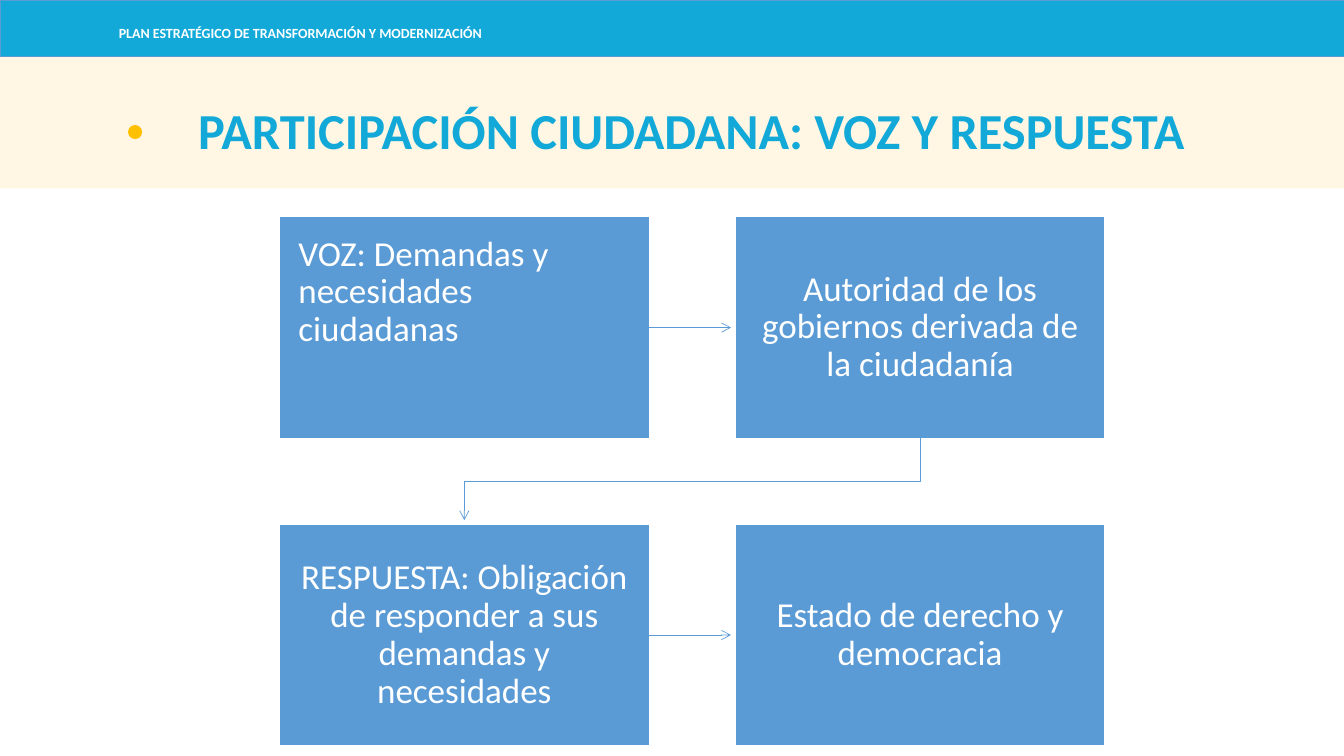
from dataclasses import dataclass

from lxml import etree
from pptx import Presentation
from pptx.dml.color import RGBColor
from pptx.enum.shapes import MSO_CONNECTOR, MSO_SHAPE
from pptx.enum.text import MSO_ANCHOR, PP_ALIGN
from pptx.oxml.ns import qn
from pptx.shapes.autoshape import Shape
from pptx.shapes.connector import Connector
from pptx.slide import Slide
from pptx.util import Inches, Pt

RECTANGLE = MSO_SHAPE.RECTANGLE
OVAL = MSO_SHAPE.OVAL
STRAIGHT = MSO_CONNECTOR.STRAIGHT
LEFT, CENTER = PP_ALIGN.LEFT, PP_ALIGN.CENTER
TOP, MIDDLE, BOTTOM = MSO_ANCHOR.TOP, MSO_ANCHOR.MIDDLE, MSO_ANCHOR.BOTTOM
RIGHT_SIDE = 3

COLORS = {
    "cyan": "12A9D9",
    "blue": "5B9BD5",
    "cream": "FFF2CC",
    "gold": "FFC000",
    "white": "FFFFFF",
}
FONT = "Calibri"

SLIDE_W, SLIDE_H = 13.33, 7.5
HEADER_H, TITLE_BAND_H = 0.56, 1.31
STEP_W, STEP_H = 3.67, 2.2
GRID_LEFT, GRID_TOP = 2.77, 2.15
COLUMN_PITCH, ROW_PITCH = 4.52, 3.05
STEP_INSET = 0.19
ARROW_GAP = 0.04


@dataclass(frozen=True)
class Box:
    left: float
    top: float
    width: float
    height: float


@dataclass(frozen=True)
class TextStyle:
    size: float
    color: str
    bold: bool = False
    align: PP_ALIGN = CENTER
    anchor: MSO_ANCHOR = MIDDLE
    spacing: float = 0.9


@dataclass(frozen=True)
class Step:
    column: int
    row: int
    text: str
    align: PP_ALIGN = CENTER
    anchor: MSO_ANCHOR = MIDDLE

    @property
    def box(self) -> Box:
        return Box(GRID_LEFT + self.column * COLUMN_PITCH,
                   GRID_TOP + self.row * ROW_PITCH, STEP_W, STEP_H)


STEPS = [
    Step(0, 0, "VOZ: Demandas y necesidades ciudadanas", LEFT, TOP),
    Step(1, 0, "Autoridad de los gobiernos derivada de la ciudadanía"),
    Step(0, 1, "RESPUESTA: Obligación de responder a sus demandas y necesidades"),
    Step(1, 1, "Estado de derecho y democracia"),
]


def rgb(name: str) -> RGBColor:
    return RGBColor.from_string(COLORS[name])


def inches(box: Box) -> list[int]:
    return [Inches(v) for v in (box.left, box.top, box.width, box.height)]


def add_filled(slide: Slide, kind: MSO_SHAPE, box: Box, fill: str,
               line: str = "", line_width: float = 0) -> Shape:
    shape = slide.shapes.add_shape(kind, *inches(box))
    shape.shadow.inherit = False
    shape.fill.solid()
    shape.fill.fore_color.rgb = rgb(fill)
    if line:
        shape.line.color.rgb = rgb(line)
        shape.line.width = Pt(line_width)
    else:
        shape.line.fill.background()
    return shape


def write_text(shape: Shape, text: str, style: TextStyle) -> None:
    frame = shape.text_frame
    frame.text = text
    frame.word_wrap = True
    frame.vertical_anchor = style.anchor
    paragraph = frame.paragraphs[0]
    paragraph.alignment = style.align
    paragraph.line_spacing = style.spacing
    font = paragraph.runs[0].font
    font.name = FONT
    font.size = Pt(style.size)
    font.bold = style.bold
    font.color.rgb = rgb(style.color)


def add_label(slide: Slide, box: Box, text: str, style: TextStyle) -> None:
    write_text(slide.shapes.add_textbox(*inches(box)), text, style)


def set_opacity(shape: Shape, percent: int) -> None:
    color = shape.fill._xPr.find(qn("a:solidFill"))[0]
    etree.SubElement(color, qn("a:alpha"), val=str(percent * 1000))


def style_arrow(arrow: Shape | Connector) -> None:
    arrow.line.color.rgb = rgb("blue")
    arrow.line.width = Pt(0.5)
    etree.SubElement(arrow.line._get_or_add_ln(), qn("a:tailEnd"), type="arrow")


def add_step(slide: Slide, step: Step) -> Shape:
    shape = add_filled(slide, RECTANGLE, step.box, "blue", "white", 1)
    write_text(shape, step.text,
               TextStyle(25, "white", align=step.align, anchor=step.anchor))
    frame = shape.text_frame
    frame.margin_left = frame.margin_right = Inches(STEP_INSET)
    frame.margin_top = frame.margin_bottom = Inches(STEP_INSET)
    return shape


def add_row_arrow(slide: Slide, source: Shape, start: Box, target: Box) -> None:
    y = Inches(start.top + STEP_H / 2)
    arrow = slide.shapes.add_connector(
        STRAIGHT, Inches(start.left + STEP_W), y, Inches(target.left - ARROW_GAP), y)
    arrow.begin_connect(source, RIGHT_SIDE)
    style_arrow(arrow)
    etree.SubElement(arrow._element.spPr, qn("a:effectLst"))


def add_return_arrow(slide: Slide, start: Box, target: Box) -> None:
    start_x, end_x = start.left + STEP_W / 2, target.left + STEP_W / 2
    start_y, end_y = start.top + STEP_H, target.top - ARROW_GAP
    turn_y = (start_y + target.top) / 2
    builder = slide.shapes.build_freeform(
        Inches(start_x), Inches(start_y))
    builder.add_line_segments(
        [(Inches(x), Inches(y))
         for x, y in ((start_x, turn_y), (end_x, turn_y), (end_x, end_y))],
        close=False)
    arrow = builder.convert_to_shape()
    arrow.fill.background()
    style_arrow(arrow)
    arrow.shadow.inherit = False


def main() -> None:
    deck = Presentation()
    deck.slide_width, deck.slide_height = Inches(SLIDE_W), Inches(SLIDE_H)
    slide = deck.slides.add_slide(deck.slide_layouts[6])

    title_band = add_filled(
        slide, RECTANGLE, Box(0, HEADER_H, SLIDE_W, TITLE_BAND_H), "cream")
    set_opacity(title_band, 54)
    add_filled(slide, RECTANGLE, Box(0, 0, SLIDE_W, HEADER_H), "cyan", "blue", 0.5)
    add_label(slide, Box(1.08, 0.23, 3.9, 0.22),
              "PLAN ESTRATÉGICO DE TRANSFORMACIÓN Y MODERNIZACIÓN",
              TextStyle(10, "white", True, LEFT, TOP, 0.8))
    add_label(slide, Box(1.2, 0.96, 11.32, 0.68),
              "PARTICIPACIÓN CIUDADANA: VOZ Y RESPUESTA",
              TextStyle(36, "cyan", True, anchor=BOTTOM))
    add_filled(slide, OVAL, Box(1.27, 1.24, 0.14, 0.14), "gold")

    voice, authority, response, rule_of_law = STEPS
    shapes = {step: add_step(slide, step) for step in STEPS}
    for source, target in ((voice, authority), (response, rule_of_law)):
        add_row_arrow(slide, shapes[source], source.box, target.box)
    add_return_arrow(slide, authority.box, response.box)

    deck.save("out.pptx")


if __name__ == "__main__":
    main()
